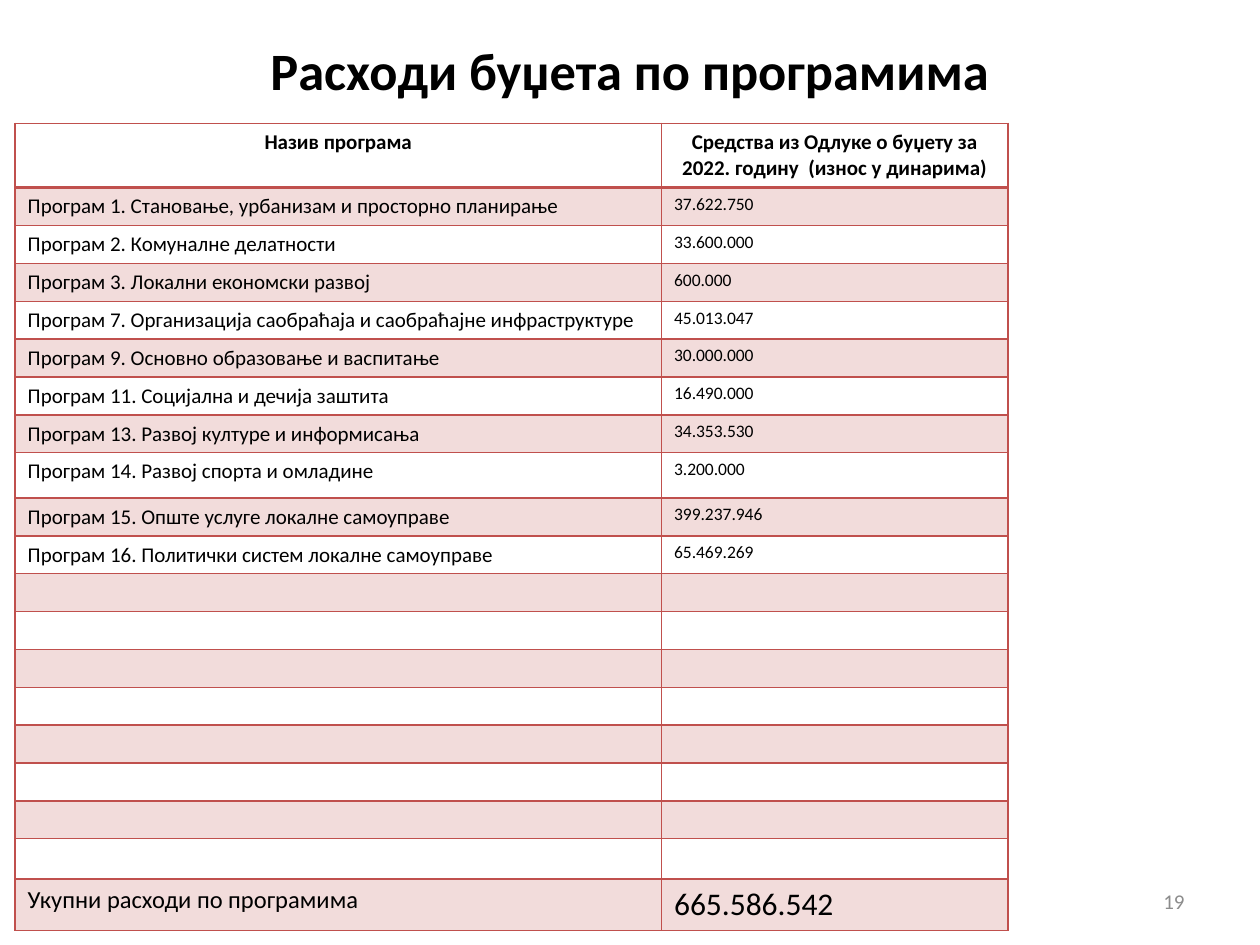
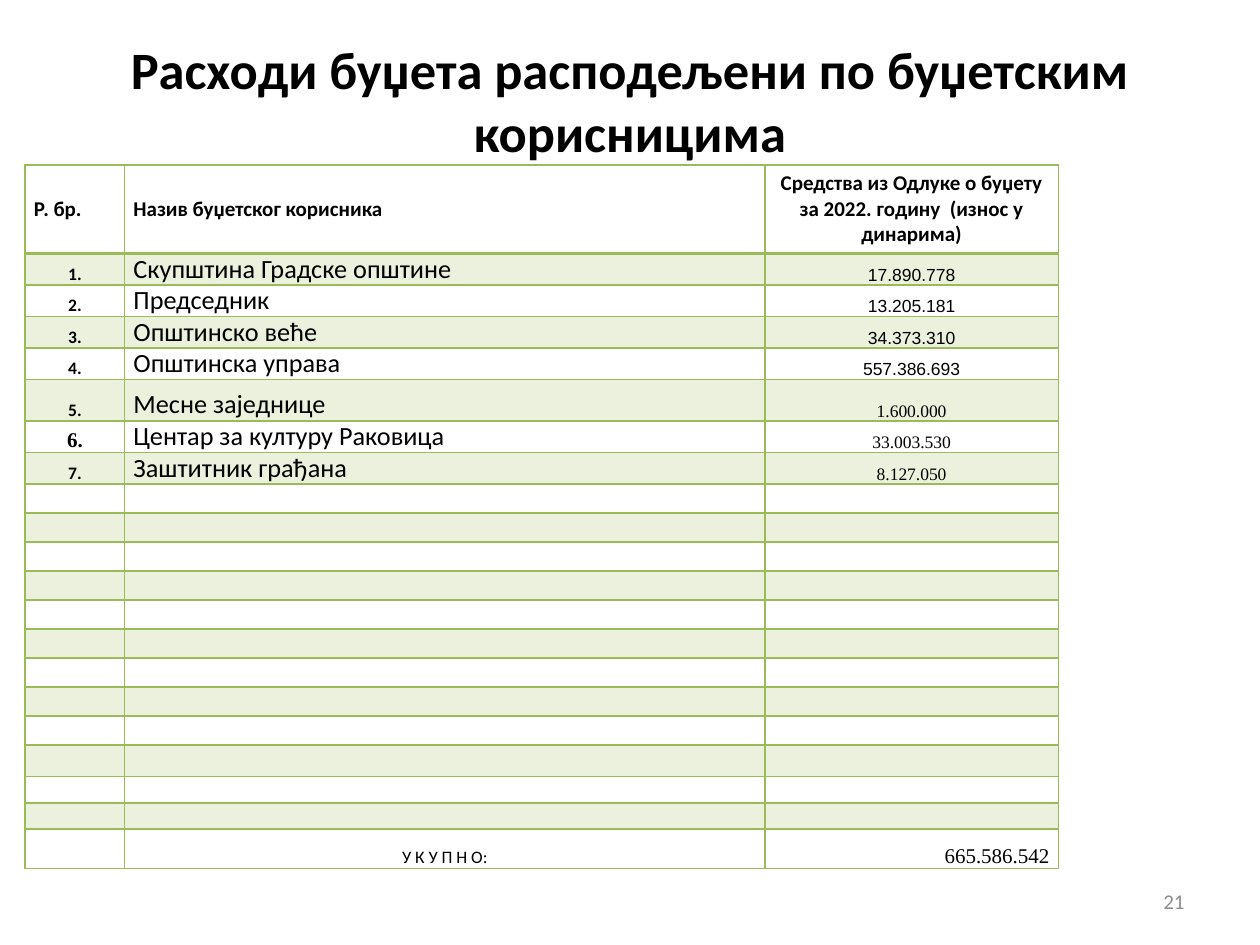
"""Builds two slides with budget tables: spending by programme and by budget user."""
import pptx
import pptx.util
import pptx.dml.color
import pptx.enum.text
import pptx.oxml
import pptx.oxml.ns

Inches = pptx.util.Inches
Pt = pptx.util.Pt
RGBColor = pptx.dml.color.RGBColor
ALIGN = pptx.enum.text.PP_ALIGN
ANCHOR = pptx.enum.text.MSO_ANCHOR
qn = pptx.oxml.ns.qn

BLACK = RGBColor(0x00, 0x00, 0x00)
GREY = RGBColor(0x8C, 0x8C, 0x8C)
RED = RGBColor(0xC0, 0x50, 0x4D)
GREEN = RGBColor(0x9B, 0xBB, 0x59)
BODY = "Calibri"
SERIF = "Times New Roman"
FUNDS = "Средства из Одлуке о буџету за 2022. годину  (износ у динарима)"
TOTAL = "665.586.542"


def write(frame, text, size, align=ALIGN.LEFT, bold=False, font=BODY, color=BLACK):
    para = frame.paragraphs[0]
    para.alignment = align
    if not text:
        para._p.get_or_add_endParaRPr().set("sz", str(size * 100))
        return
    run = para.add_run()
    run.text = text
    run.font.size = Pt(size)
    run.font.bold = bold
    run.font.name = font
    run.font.color.rgb = color


def make_grid(slide, hue, left, top, widths, heights, pad, anchor):
    frame = slide.shapes.add_table(
        len(heights), len(widths), Inches(left), Inches(top),
        Inches(sum(widths)), Inches(sum(heights)))
    table = frame.table
    table.first_row = False
    table.horz_banding = False
    for col, width in zip(table.columns, widths):
        col.width = Inches(width)
    for index, (row, height) in enumerate(zip(table.rows, heights)):
        row.height = Inches(height)
        for cell in row.cells:
            cell.margin_left = cell.margin_right = Inches(pad[0])
            cell.margin_top = cell.margin_bottom = Inches(pad[1])
            cell.vertical_anchor = anchor
            if index % 2:
                cell.fill.solid()
                cell.fill.fore_color.rgb = hue
            else:
                cell.fill.background()
            props = cell._tc.get_or_add_tcPr()
            for tint in props.iter(qn("a:srgbClr")):
                tint.append(pptx.oxml.parse_xml(
                    f'<a:alpha {pptx.oxml.ns.nsdecls("a")} val="20000"/>'))
            for place, side in enumerate("LRTB"):
                thick = (index, side) in ((0, "B"), (1, "T"))
                props.insert(place, pptx.oxml.parse_xml(
                    f'<a:ln{side} {pptx.oxml.ns.nsdecls("a")} w="{Pt(2 if thick else 1)}">'
                    f'<a:solidFill><a:srgbClr val="{hue}"/></a:solidFill></a:ln{side}>'))
    return table


deck = pptx.Presentation()
deck.slide_width = Inches(10)
deck.slide_height = Inches(7.5)

heads = [
    ("Расходи буџета по програмима", (0.74, 0.13, 8.52, 0.85), "19"),
    ("Расходи буџета расподељени по буџетским корисницима", (0.5, 0.17, 9, 1.25), "21"),
]
slides = []
for text, box, number in heads:
    slide = deck.slides.add_slide(deck.slide_layouts[5])
    title = slide.shapes.title
    title.left, title.top, title.width, title.height = map(Inches, box)
    title.text_frame.auto_size = pptx.enum.text.MSO_AUTO_SIZE.NONE
    title.text_frame.vertical_anchor = ANCHOR.MIDDLE
    write(title.text_frame, text, 30, ALIGN.CENTER, True)
    page = slide.shapes.add_textbox(Inches(7.17), Inches(6.95), Inches(2.33), Inches(0.4))
    page.text_frame.word_wrap = True
    page.text_frame.vertical_anchor = ANCHOR.MIDDLE
    write(page.text_frame, number, 12, ALIGN.RIGHT, color=GREY)
    slides.append(slide)

plans = [
    ("Програм 1. Становање, урбанизам и просторно планирање", "37.622.750"),
    ("Програм 2. Комуналне делатности", "33.600.000"),
    ("Програм 3. Локални економски развој", "600.000"),
    ("Програм 7. Организација саобраћаја и саобраћајне инфраструктуре", "45.013.047"),
    ("Програм 9. Основно образовање и васпитање", "30.000.000"),
    ("Програм 11. Социјална и дечија заштита", "16.490.000"),
    ("Програм 13. Развој културе и информисања", "34.353.530"),
    ("Програм 14. Развој спорта и омладине", "3.200.000"),
    ("Програм 15. Опште услуге локалне самоуправе", "399.237.946"),
    ("Програм 16. Политички систем локалне самоуправе", "65.469.269"),
]
plans += [("", "")] * 8
heights = [0.51] + [0.3] * 7 + [0.36] + [0.3] * 9 + [0.32, 0.41]
table = make_grid(slides[0], RED, 0.12, 0.98, (5.13, 2.75), heights, (0.1, 0.05), ANCHOR.TOP)
for col, text in enumerate(("Назив програма", FUNDS)):
    write(table.cell(0, col).text_frame, text, 12, ALIGN.CENTER, True)
for row, (name, amount) in enumerate(plans, 1):
    write(table.cell(row, 0).text_frame, name, 12)
    write(table.cell(row, 1).text_frame, amount, 10 if amount else 12)
write(table.cell(19, 0).text_frame, "Укупни расходи по програмима", 14)
write(table.cell(19, 1).text_frame, TOTAL, 18)

users = [
    ("Скупштина Градске општине", "17.890.778", "Arial"),
    ("Председник", "13.205.181", "Arial"),
    ("Општинско веће", "34.373.310", "Arial"),
    ("Општинска управа", "557.386.693", "Arial"),
    ("Месне заједнице", "1.600.000", SERIF),
    ("Центар за културу Раковица", "33.003.530", SERIF),
    ("Заштитник грађана", "8.127.050", SERIF),
]
users += [("", "", BODY)] * 12
heights = [0.7] + [0.25] * 4 + [0.33] + [0.25] * 2 + [0.23] * 9 + [0.25, 0.21, 0.21, 0.31]
table = make_grid(slides[1], GREEN, 0.2, 1.31, (0.79, 5.08, 2.33), heights, (0.07, 0), ANCHOR.BOTTOM)
labels = [("Р. бр.", ALIGN.LEFT), ("Назив буџетског корисника", ALIGN.LEFT), (FUNDS, ALIGN.CENTER)]
for col, (text, align) in enumerate(labels):
    table.cell(0, col).vertical_anchor = ANCHOR.MIDDLE
    write(table.cell(0, col).text_frame, text, 12, align, True)
for row, (name, amount, font) in enumerate(users, 1):
    order = f"{row}." if name else ""
    size, face = (12, SERIF) if row == 6 else (10, BODY)
    write(table.cell(row, 0).text_frame, order, size, ALIGN.CENTER, True, face)
    write(table.cell(row, 1).text_frame, name, 15 if name else 10)
    write(table.cell(row, 2).text_frame, amount, 10, ALIGN.CENTER, font=font)
write(table.cell(20, 0).text_frame, "", 10)
write(table.cell(20, 1).text_frame, "У К У П Н О:", 10, ALIGN.CENTER)
write(table.cell(20, 2).text_frame, TOTAL, 12, ALIGN.RIGHT, font=SERIF)

deck.save("out.pptx")
